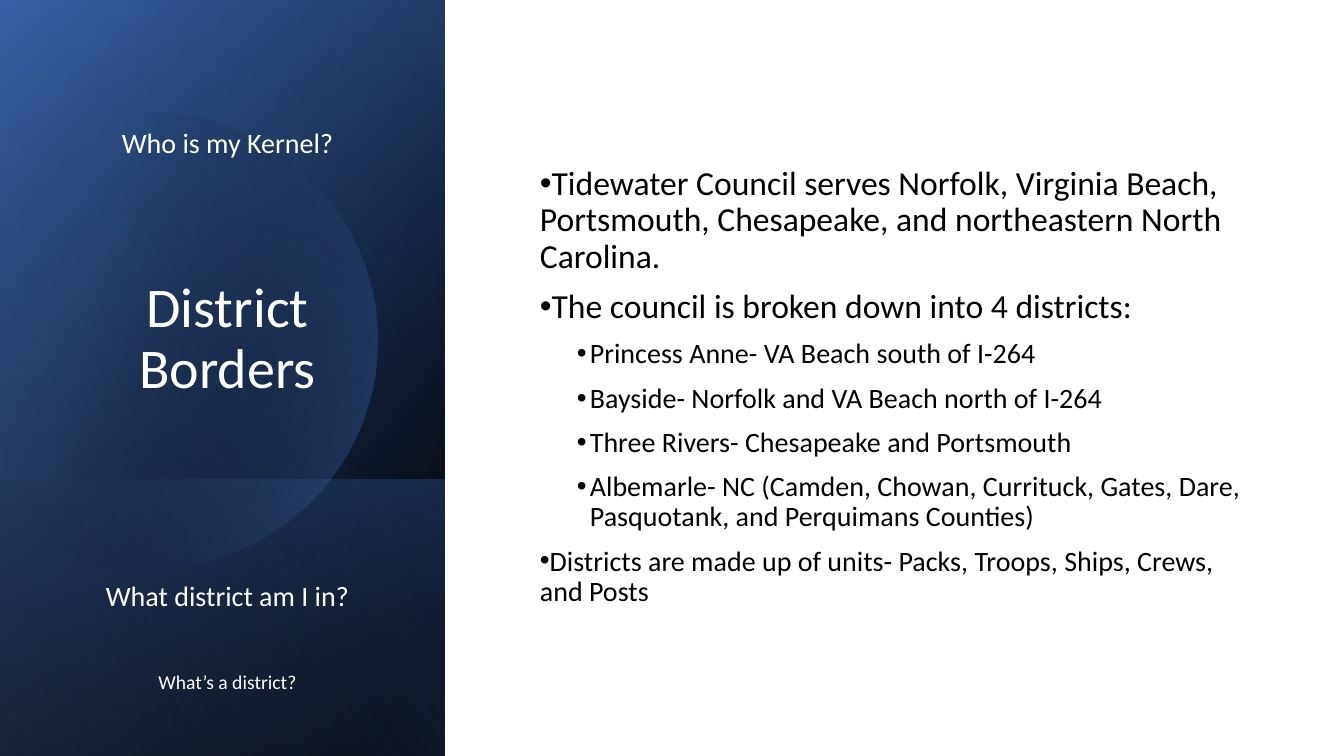
import math
from dataclasses import dataclass

import lxml.etree
import pptx
import pptx.dml.color
import pptx.enum.shapes
import pptx.enum.text
import pptx.oxml.ns
import pptx.util

PX = 914400 / 100.8
ALIGN = pptx.enum.text.PP_ALIGN
ANCHOR = pptx.enum.text.MSO_ANCHOR


@dataclass(frozen=True)
class Theme:
    """Colours, font and type sizes of the slide."""
    font: str = "Calibri"
    white: str = "FFFFFF"
    black: str = "000000"
    navy: str = "2F5496"
    blue: str = "4472C4"
    pale: str = "8DA9DB"
    title: int = 40
    large: int = 24
    body: int = 20
    small: int = 14
    lines: float = 0.9
    gap: int = 10


THEME = Theme()

HEADS = [
    ("Who is my Kernel?", THEME.body, 0),
    ("District Borders", THEME.title, 86),
    ("What district am I in?", THEME.body, 130),
    ("What’s a district?", THEME.small, 43),
]

POINTS = [
    ("Tidewater Council serves Norfolk, Virginia Beach, Portsmouth, "
     "Chesapeake, and northeastern North Carolina.", THEME.large, 0),
    ("The council is broken down into 4 districts:", THEME.large, 0),
    ("Princess Anne- VA Beach south of I-264", THEME.body, 1),
    ("Bayside- Norfolk and VA Beach north of I-264", THEME.body, 1),
    ("Three Rivers- Chesapeake and Portsmouth", THEME.body, 1),
    ("Albemarle- NC (Camden, Chowan, Currituck, Gates, Dare, "
     "Pasquotank, and Perquimans Counties)", THEME.body, 1),
    ("Districts are made up of units- Packs, Troops, Ships, Crews, and Posts",
     THEME.body, 0),
]


def emu(px):
    """Turn pixels into EMU."""
    return pptx.util.Emu(round(px * PX))


def node(parent, tag, **attrs):
    """Add a DrawingML child element."""
    values = {key: str(value) for key, value in attrs.items()}
    return lxml.etree.SubElement(parent, pptx.oxml.ns.qn("a:" + tag), values)


def shade(shape, angle, stops):
    """Fill a shape with a gradient of (place, colour, opacity) stops."""
    shape.shadow.inherit = False
    shape.line.fill.background()
    shape.fill.background()
    props = shape.fill._xPr
    blank = props.find(pptx.oxml.ns.qn("a:noFill"))
    grad = node(props, "gradFill", rotWithShape=1)
    props.replace(blank, grad)
    row = node(grad, "gsLst")
    for place, colour, alpha in stops:
        stop = node(row, "gs", pos=place * 1000)
        node(node(stop, "srgbClr", val=colour), "alpha", val=alpha * 1000)
    node(grad, "lin", ang=angle * 60000, scaled=0)


def block(slide, box, angle, stops):
    """Add a shaded rectangle."""
    kind = pptx.enum.shapes.MSO_SHAPE.RECTANGLE
    shape = slide.shapes.add_shape(kind, *map(emu, box))
    shade(shape, angle, stops)


def disc(slide, box):
    """Add the round glow, cut off at the left edge of the box."""
    left, top = box[:2]
    across, down, radius = 149, 341, 228
    limit = math.acos(-across / radius)
    steps = 90
    turns = [limit * (2 * i / steps - 1) for i in range(steps + 1)]
    dots = [(10 * (left + across + radius * math.cos(t)),
             10 * (top + down + radius * math.sin(t))) for t in turns]
    form = slide.shapes.build_freeform(*dots[0], scale=PX / 10)
    form.add_line_segments(dots[1:], close=True)
    shade(form.convert_to_shape(), 14,
          [(0, THEME.black, 0), (29, THEME.black, 0), (100, THEME.blue, 43)])


def frame(slide, box, anchor):
    """Add an empty wrapping text box and return its text frame."""
    text = slide.shapes.add_textbox(*map(emu, box)).text_frame
    text.word_wrap = True
    text.vertical_anchor = anchor
    return text


def write(text, index, words, size, colour, space):
    """Write one paragraph with a single run and return it."""
    para = text.add_paragraph() if index else text.paragraphs[0]
    para.line_spacing = THEME.lines
    if index:
        para.space_before = pptx.util.Pt(space)
    run = para.add_run()
    run.text = words
    run.font.name = THEME.font
    run.font.size = pptx.util.Pt(size)
    run.font.color.rgb = pptx.dml.color.RGBColor.from_string(colour)
    return para


def mark(para, level):
    """Give a paragraph its bullet and indent."""
    para.level = level
    props = para._p.get_or_add_pPr()
    props.set("marL", str(emu(50 * level)))
    props.set("indent", str(emu(-13)))
    node(node(props, "buClr"), "srgbClr", val=THEME.black)
    node(props, "buFont", typeface="Arial")
    node(props, "buChar", char="•")


def panel(slide, box):
    """Build the dark side panel with its headings."""
    left, top, width, height = box
    foot = 276
    low = (left, top + height - foot, width, foot)
    block(slide, box, 220,
          [(0, THEME.black, 100), (8, THEME.black, 100), (100, THEME.navy, 100)])
    block(slide, box, 240, [(0, THEME.black, 0), (100, THEME.blue, 46)])
    block(slide, low, 140, [(0, THEME.blue, 29), (100, THEME.black, 30)])
    disc(slide, box)
    block(slide, box, 150, [(0, THEME.black, 0), (100, THEME.pale, 11)])
    area = (left + 51, top + 64, 353, 635)
    text = frame(slide, area, ANCHOR.BOTTOM)
    for index, (words, size, space) in enumerate(HEADS):
        para = write(text, index, words, size, THEME.white, space)
        para.alignment = ALIGN.CENTER


def points(slide, box):
    """Build the bulleted list."""
    text = frame(slide, box, ANCHOR.MIDDLE)
    for index, (words, size, level) in enumerate(POINTS):
        para = write(text, index, words, size, THEME.black, THEME.gap)
        mark(para, level)


def main():
    """Build and save the deck."""
    deck = pptx.Presentation()
    deck.slide_width, deck.slide_height = emu(1344), emu(756)
    slide = deck.slides.add_slide(deck.slide_layouts[6])
    panel(slide, (0, 0, 445, 756))
    points(slide, (530, 81, 723, 612))
    deck.save("out.pptx")


if __name__ == "__main__":
    main()
